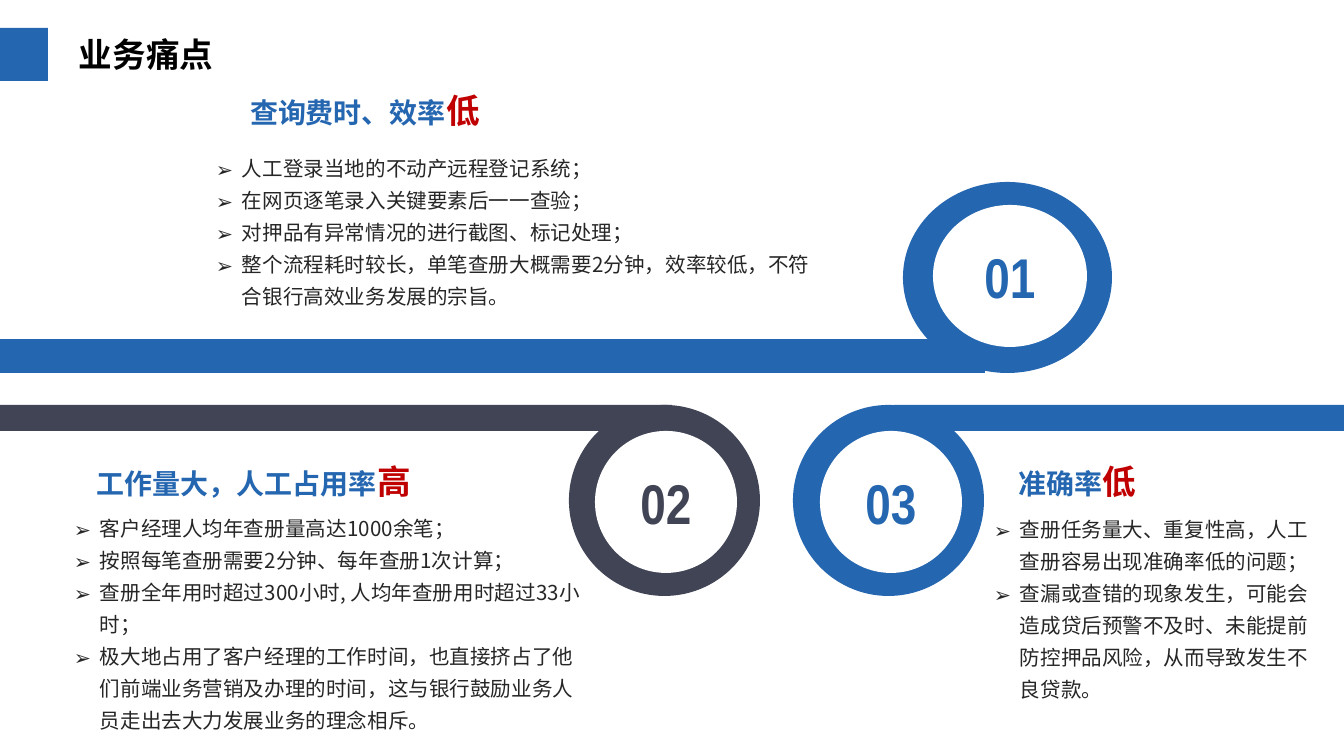
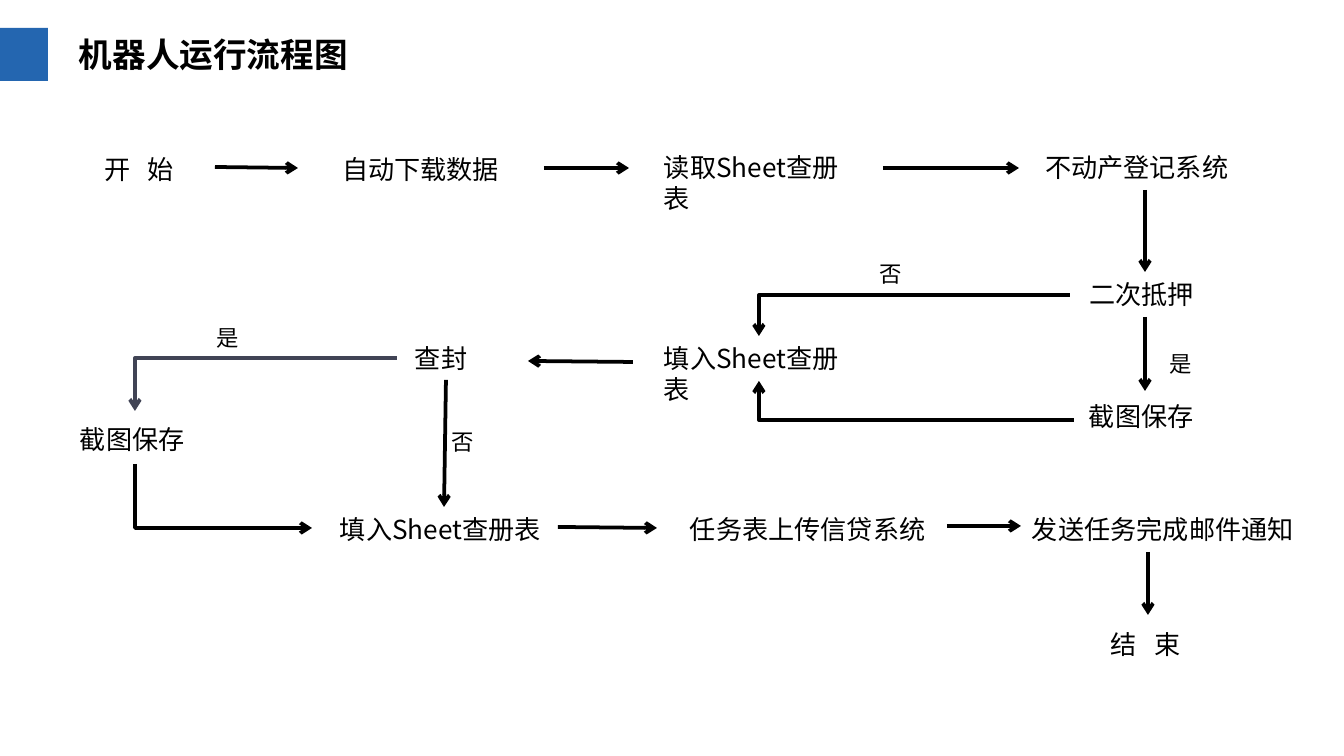
from lxml import etree
from pptx import Presentation
from pptx import util as u
from pptx.dml.color import RGBColor
from pptx.enum import shapes, text
from pptx.oxml import ns

BLUE, SLATE, RED = "2466B0", "414455", "C00000"
BLACK, BODY, WHITE = "000000", "262626", "FFFFFF"
CJK, NUMERAL = "Noto Sans CJK SC", "Arial Narrow"
SLIDE_W, SLIDE_H = 1344, 756
PX = 10 * 914400 / SLIDE_W

# Pain points: heading runs, heading box, bullet box, bullets
PAIN_POINTS = [
    ("查询费时、效率", "低", (241, 85, 253, 51), (207, 144, 629, 169), [
        "人工登录当地的不动产远程登记系统；",
        "在网页逐笔录入关键要素后一一查验；",
        "对押品有异常情况的进行截图、标记处理；",
        "整个流程耗时较长，单笔查册大概需要2分钟，效率较低，不符合银行高效业务发展的宗旨。",
    ]),
    ("工作量大，人工占用率", "高", (88, 456, 337, 51), (65, 504, 524, 234), [
        "客户经理人均年查册量高达1000余笔；",
        "按照每笔查册需要2分钟、每年查册1次计算；",
        "查册全年用时超过300小时, 人均年查册用时超过33小时；",
        "极大地占用了客户经理的工作时间，也直接挤占了他们前端业务营销及办理的时间，这与银行鼓励业务人员走出去大力发展业务的理念相斥。",
    ]),
    ("准确率", "低", (1010, 456, 140, 51), (985, 505, 344, 202), [
        "查册任务量大、重复性高，人工查册容易出现准确率低的问题；",
        "查漏或查错的现象发生，可能会造成贷后预警不及时、未能提前防控押品风险，从而导致发生不良贷款。",
    ]),
]

# Number, colour, band, outer ellipse, inner ellipse
RINGS = [
    ("02", SLATE, (0, 405, 672, 26), (569, 405, 191, 191), (595, 431, 142, 142)),
    ("01", BLUE, (0, 339, 985, 34), (903, 182, 209, 191), (933, 205, 154, 142)),
    ("03", BLUE, (894, 405, 450, 26), (793, 405, 191, 191), (820, 431, 142, 142)),
]

# Step, left, top, width
STEPS = [
    ("自动下载数据", 329, 146, 195),
    ("读取Sheet查册表", 651, 144, 220),
    ("不动产登记系统", 1032, 144, 226),
    ("二次抵押", 1076, 271, 146),
    ("截图保存", 1076, 393, 160),
    ("填入Sheet查册表", 651, 335, 216),
    ("查封", 402, 335, 92),
    ("截图保存", 67, 416, 136),
    ("填入Sheet查册表", 327, 506, 245),
    ("任务表上传信贷系统", 677, 506, 263),
    ("发送任务完成邮件通知", 1019, 506, 294),
]
SPREAD_STEPS = [("开", "始", 91, 146, 106), ("结", "束", 1098, 621, 109)]
SPREAD_GAP = 9.5  # points between the two letters

ANSWERS = [("否", 867, 253), ("是", 1157, 343), ("是", 204, 317), ("否", 439, 421)]

# x1, y1, x2, y2
ARROWS = [
    (215, 167, 298, 168), (544, 168, 629, 168), (883, 168, 1019, 168),
    (1145, 190, 1145, 272), (1145, 317, 1145, 391), (633, 362, 528, 361),
    (558, 527, 657, 528), (947, 526, 1021, 526), (1148, 552, 1148, 615),
    (446, 380, 444, 507),
]
# Turning once, sideways first
SIDE_ARROWS = [
    (1070, 295, 759, 336, BLACK), (1074, 420, 759, 381, BLACK),
    (397, 358, 135, 411, SLATE),
]
# Turning once, downwards first
DOWN_ARROW = (135, 464, 312, 528)


def px(n):
    return u.Emu(round(n * PX))


def rgb(hex_code):
    return RGBColor.from_string(hex_code)


def add_run(p, words, size, color, bold=False, font=CJK, spacing=0):
    r = p.add_run()
    r.text = words
    r.font.size, r.font.bold, r.font.name = u.Pt(size), bold, font
    r.font.color.rgb = rgb(color)
    props = r.font._element
    etree.SubElement(props, ns.qn("a:ea")).set("typeface", font)
    if spacing:
        props.set("spc", str(round(spacing * 100)))


def add_text_box(s, box, wrap=True, inset=(13, 7)):
    tf = s.shapes.add_textbox(*map(px, box)).text_frame
    tf.word_wrap = wrap
    tf.margin_left = tf.margin_right = px(inset[0])
    tf.margin_top = tf.margin_bottom = px(inset[1])
    return tf


def add_solid(s, kind, box, color):
    sp = s.shapes.add_shape(kind, *map(px, box))
    sp.shadow.inherit = False
    sp.fill.solid()
    sp.fill.fore_color.rgb = rgb(color)
    sp.line.fill.background()
    return sp


def add_title(s, title):
    add_solid(s, shapes.MSO_SHAPE.RECTANGLE, (0, 28, 48, 53), BLUE)
    width = 26 + 34 * len(title)
    tf = add_text_box(s, (66, 27, width, 54), wrap=False)
    add_run(tf.paragraphs[0], title, 18, BLACK, bold=True)


def add_ring(s, number, color, band, outer, inner):
    add_solid(s, shapes.MSO_SHAPE.RECTANGLE, band, color)
    add_solid(s, shapes.MSO_SHAPE.OVAL, outer, color)
    tf = add_solid(s, shapes.MSO_SHAPE.OVAL, inner, WHITE).text_frame
    tf.vertical_anchor = text.MSO_ANCHOR.MIDDLE
    p = tf.paragraphs[0]
    p.alignment = text.PP_ALIGN.CENTER
    add_run(p, number, 30, color, bold=True, font=NUMERAL)


def add_bullets(s, box, items):
    tf = add_text_box(s, box, inset=(9, 5))
    for i, item in enumerate(items):
        p = tf.add_paragraph() if i else tf.paragraphs[0]
        props = p._p.get_or_add_pPr()
        props.set("marL", str(px(26)))
        props.set("indent", str(px(-26)))
        p.line_spacing = 1.3
        etree.SubElement(props, ns.qn("a:buFont")).set("typeface", CJK)
        etree.SubElement(props, ns.qn("a:buChar")).set("char", "➢")
        add_run(p, item, 11, BODY)


def add_arrow(s, x1, y1, x2, y2, color=BLACK, bent=False):
    kind = shapes.MSO_CONNECTOR.ELBOW if bent else shapes.MSO_CONNECTOR.STRAIGHT
    c = s.shapes.add_connector(kind, *map(px, (x1, y1, x2, y2)))
    c.line.color.rgb = rgb(color)
    c.line.width = u.Pt(2)
    etree.SubElement(c.line._get_or_add_ln(), ns.qn("a:tailEnd")).set("type", "arrow")
    props = c._element.spPr
    etree.SubElement(props, ns.qn("a:effectLst"))
    if bent:
        props.find(ns.qn("a:prstGeom")).set("prst", "bentConnector2")
    return c


def add_down_arrow(s, x1, y1, x2, y2):
    """Draw the bend sideways about its centre, then turn it by 90 degrees."""
    cx, cy = (x1 + x2) / 2, (y1 + y2) / 2
    dx, dy = (y2 - y1) / 2, (x2 - x1) / 2
    c = add_arrow(s, cx - dx, cy + dy, cx + dx, cy - dy, bent=True)
    c._element.spPr.find(ns.qn("a:xfrm")).set("rot", str(90 * 60000))


def build_pain_points(s):
    for ring in RINGS:
        add_ring(s, *ring)
    for heading, verdict, heading_box, bullet_box, items in PAIN_POINTS:
        add_bullets(s, bullet_box, items)
        p = add_text_box(s, heading_box, wrap=False, inset=(9, 5)).paragraphs[0]
        add_run(p, heading, 15, BLUE, bold=True)
        add_run(p, verdict, 18, RED, bold=True)
    add_title(s, "业务痛点")


def build_flow(s):
    add_title(s, "机器人运行流程图")
    for step, left, top, width in STEPS:
        p = add_text_box(s, (left, top, width, 46)).paragraphs[0]
        add_run(p, step, 14, BLACK)
    for first, last, left, top, width in SPREAD_STEPS:
        p = add_text_box(s, (left, top, width, 46)).paragraphs[0]
        add_run(p, first, 14, BLACK, spacing=SPREAD_GAP)
        add_run(p, last, 14, BLACK)
    for arrow in ARROWS:
        add_arrow(s, *arrow)
    for arrow in SIDE_ARROWS:
        add_arrow(s, *arrow, bent=True)
    add_down_arrow(s, *DOWN_ARROW)
    for answer, left, top in ANSWERS:
        p = add_text_box(s, (left, top, 49, 41)).paragraphs[0]
        add_run(p, answer, 12, BLACK)


def main():
    prs = Presentation()
    prs.slide_width, prs.slide_height = px(SLIDE_W), px(SLIDE_H)
    for build in (build_pain_points, build_flow):
        build(prs.slides.add_slide(prs.slide_layouts[6]))
    prs.save("out.pptx")


if __name__ == "__main__":
    main()
